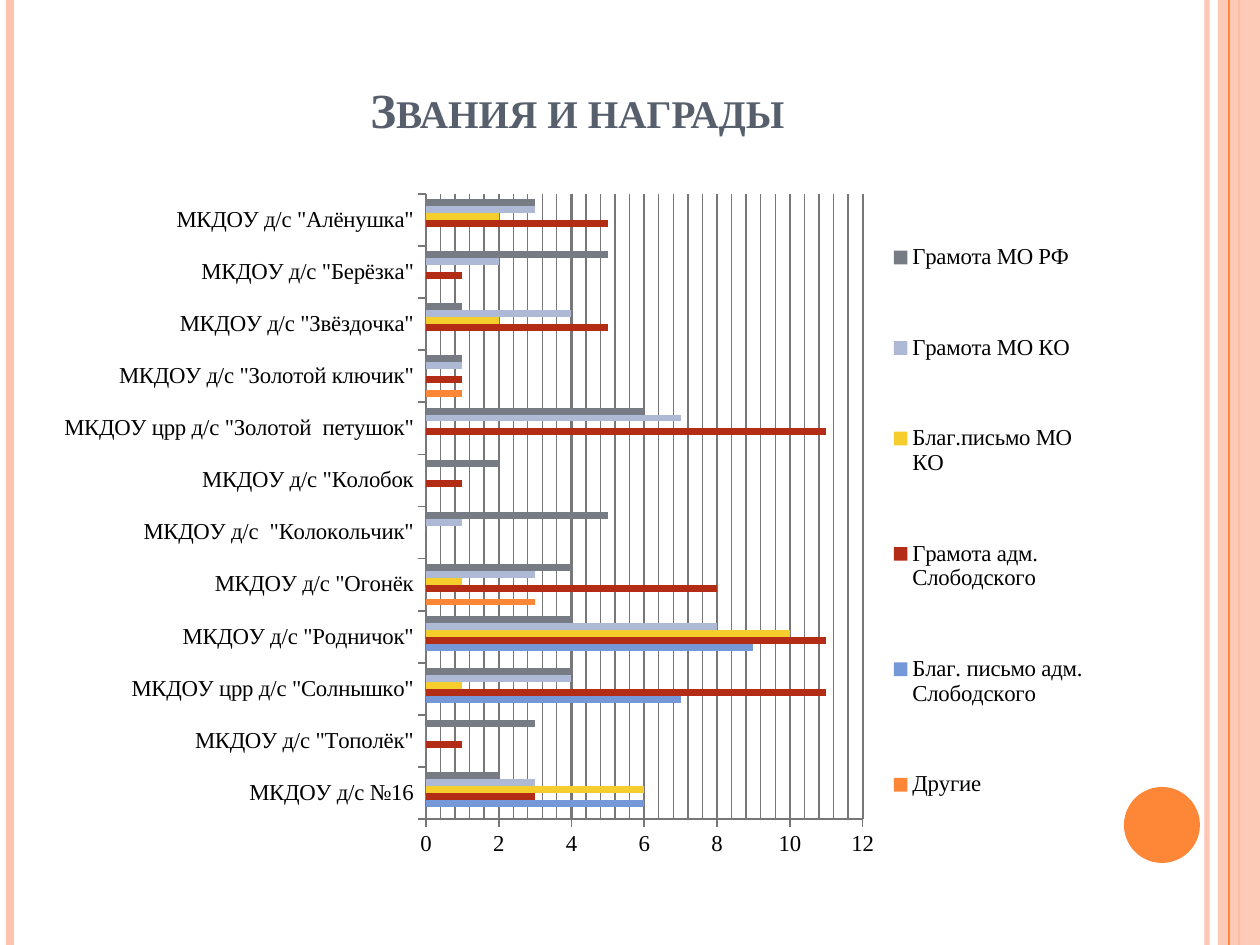
from copy import deepcopy
from dataclasses import dataclass

from lxml.etree import SubElement
from pptx import Presentation
from pptx.chart.data import CategoryChartData
from pptx.dml.color import RGBColor
from pptx.enum.chart import XL_CHART_TYPE, XL_LEGEND_POSITION, XL_TICK_MARK
from pptx.enum.shapes import MSO_CONNECTOR, MSO_SHAPE
from pptx.enum.text import MSO_ANCHOR, PP_ALIGN
from pptx.oxml.ns import qn
from pptx.util import Emu, Pt

PIXELS_PER_INCH = 126
SLIDE_WIDTH, SLIDE_HEIGHT = 1260, 945


@dataclass(frozen=True)
class Theme:
    font: str = "Times New Roman"
    title_size: int = 28
    chart_size: int = 13
    title: str = "575F6D"
    text: str = "000000"
    axis: str = "777777"
    orange: str = "FE8637"
    peach: str = "FEC3AE"


@dataclass(frozen=True)
class Stripe:
    x: int
    color: str
    weight: float
    opacity: int = 100


@dataclass(frozen=True)
class Award:
    name: str
    color: str
    values: tuple


THEME = Theme()

STRIPES = (
    Stripe(1207, THEME.peach, 3, 93),
    Stripe(10, THEME.peach, 4.5),
    Stripe(1239, THEME.orange, 1.5),
)
INNER_STRIPE = Stripe(1229, THEME.orange, 0.75)

KINDERGARTENS = (
    "МКДОУ д/с №16",
    'МКДОУ д/с "Тополёк"',
    'МКДОУ црр д/с "Солнышко"',
    'МКДОУ д/с "Родничок"',
    'МКДОУ д/с "Огонёк',
    'МКДОУ д/с  "Колокольчик"',
    'МКДОУ д/с "Колобок',
    'МКДОУ црр д/с "Золотой  петушок"',
    'МКДОУ д/с "Золотой ключик"',
    'МКДОУ д/с "Звёздочка"',
    'МКДОУ д/с "Берёзка"',
    'МКДОУ д/с "Алёнушка"',
)

AWARDS = (
    Award("Другие", THEME.orange, (0, 0, 0, 0, 3, 0, 0, 0, 1, 0, 0, 0)),
    Award("Благ. письмо адм. Слободского", "7598D9", (6, 0, 7, 9, 0, 0, 0, 0, 0, 0, 0, 0)),
    Award("Грамота адм. Слободского", "B32C16", (3, 1, 11, 11, 8, 0, 1, 11, 1, 5, 1, 5)),
    Award("Благ.письмо МО КО", "F5CD2D", (6, 0, 1, 10, 1, 0, 0, 0, 0, 2, 0, 2)),
    Award("Грамота МО КО", "AEBAD5", (3, 0, 4, 8, 3, 1, 0, 7, 1, 4, 2, 3)),
    Award("Грамота МО РФ", "777C84", (2, 3, 4, 4, 4, 5, 2, 6, 1, 1, 5, 3)),
)


def px(value: int) -> Emu:
    return Emu(round(value * 914400 / PIXELS_PER_INCH))


def rgb(color: str) -> RGBColor:
    return RGBColor.from_string(color)


def set_opacity(element, percent: int) -> None:
    if percent < 100:
        color = next(element.iter(qn("a:srgbClr")))
        SubElement(color, qn("a:alpha")).set("val", str(percent * 1000))


def write_text(frame, text: str, *, size: int, color: str, bold: bool = False,
               small_caps: bool = False, align=PP_ALIGN.LEFT, anchor=MSO_ANCHOR.TOP) -> None:
    frame.word_wrap = True
    frame.vertical_anchor = anchor
    paragraph = frame.paragraphs[0]
    paragraph.alignment = align
    run = paragraph.add_run()
    run.text = text
    run.font.name = THEME.font
    run.font.size = Pt(size)
    run.font.bold = bold
    run.font.color.rgb = rgb(color)
    if small_caps:
        run.font._element.set("cap", "small")


def add_stripe(slide, stripe: Stripe) -> None:
    line = slide.shapes.add_connector(
        MSO_CONNECTOR.STRAIGHT, px(stripe.x), 0, px(stripe.x), px(SLIDE_HEIGHT))
    line.line.color.rgb = rgb(stripe.color)
    line.line.width = Pt(stripe.weight)
    properties = line._element.spPr
    set_opacity(properties, stripe.opacity)
    SubElement(properties, qn("a:effectLst"))


def add_filled(slide, kind, left: int, top: int, width: int, height: int,
               color: str, opacity: int = 100) -> None:
    shape = slide.shapes.add_shape(kind, px(left), px(top), px(width), px(height))
    shape.shadow.inherit = False
    shape.fill.solid()
    shape.fill.fore_color.rgb = rgb(color)
    set_opacity(shape._element.spPr, opacity)
    shape.line.fill.background()


def set_layout(parent, before: str, x: float, y: float, width: float, height: float,
               inner: bool = False) -> None:
    for old in parent.findall(qn("c:layout")):
        parent.remove(old)
    layout = SubElement(parent, qn("c:layout"))
    parent.find(qn(before)).addprevious(layout)
    manual = SubElement(layout, qn("c:manualLayout"))
    settings = {"layoutTarget": "inner"} if inner else {}
    settings |= {"xMode": "edge", "yMode": "edge", "x": x, "y": y, "w": width, "h": height}
    for name, value in settings.items():
        SubElement(manual, qn(f"c:{name}")).set("val", str(value))


def format_line(line, weight: float) -> None:
    line.color.rgb = rgb(THEME.axis)
    line.width = Pt(weight)


def format_gridlines(axis, major_weight: float, minor_weight: float) -> None:
    axis.has_major_gridlines = axis.has_minor_gridlines = True
    line = axis.major_gridlines.format.line
    format_line(line, minor_weight)
    major = axis._element.find(qn("c:majorGridlines"))
    minor = axis._element.find(qn("c:minorGridlines"))
    minor.append(deepcopy(major.find(qn("c:spPr"))))
    format_line(line, major_weight)


def add_awards_chart(slide) -> None:
    data = CategoryChartData()
    data.categories = KINDERGARTENS
    for award in AWARDS:
        data.add_series(award.name, award.values)
    chart = slide.shapes.add_chart(
        XL_CHART_TYPE.BAR_CLUSTERED, 0, px(165), px(1092), px(727), data).chart
    chart.has_title = False
    chart.font.name = THEME.font
    chart.font.size = Pt(THEME.chart_size)
    chart.font.color.rgb = rgb(THEME.text)

    plot = chart.plots[0]
    plot.gap_width = 150
    plot.overlap = 0
    plot.vary_by_categories = False
    for series, award in zip(plot.series, AWARDS):
        series.format.fill.solid()
        series.format.fill.fore_color.rgb = rgb(award.color)

    for axis in (chart.category_axis, chart.value_axis):
        axis.major_tick_mark = XL_TICK_MARK.OUTSIDE
        axis.minor_tick_mark = XL_TICK_MARK.NONE
        format_line(axis.format.line, 1)
    values = chart.value_axis
    values.minimum_scale, values.maximum_scale = 0, 12
    values.major_unit, values.minor_unit = 2, 0.4
    format_gridlines(values, 1.25, 0.75)

    chart.has_legend = True
    chart.legend.position = XL_LEGEND_POSITION.RIGHT
    chart.legend.include_in_layout = False
    set_layout(chart.legend._element, "c:overlay", 0.81, 0.02, 0.19, 0.94)
    set_layout(chart._chartSpace.chart.plotArea, "c:barChart", 0.39, 0.04, 0.4, 0.86, inner=True)


def main() -> None:
    presentation = Presentation()
    presentation.slide_width, presentation.slide_height = px(SLIDE_WIDTH), px(SLIDE_HEIGHT)
    slide = presentation.slides.add_slide(presentation.slide_layouts[5])

    for stripe in STRIPES:
        add_stripe(slide, stripe)
    add_filled(slide, MSO_SHAPE.RECTANGLE, 1218, 0, 42, SLIDE_HEIGHT, THEME.peach, 87)
    add_stripe(slide, INNER_STRIPE)
    add_filled(slide, MSO_SHAPE.OVAL, 1124, 787, 76, 76, THEME.orange)

    title = slide.shapes.title
    title.left, title.top, title.width, title.height = px(63), px(38), px(1029), px(107)
    write_text(title.text_frame, "Звания и награды", size=THEME.title_size, color=THEME.title,
               bold=True, small_caps=True, align=PP_ALIGN.CENTER, anchor=MSO_ANCHOR.BOTTOM)
    add_awards_chart(slide)
    presentation.save("out.pptx")


if __name__ == "__main__":
    main()
